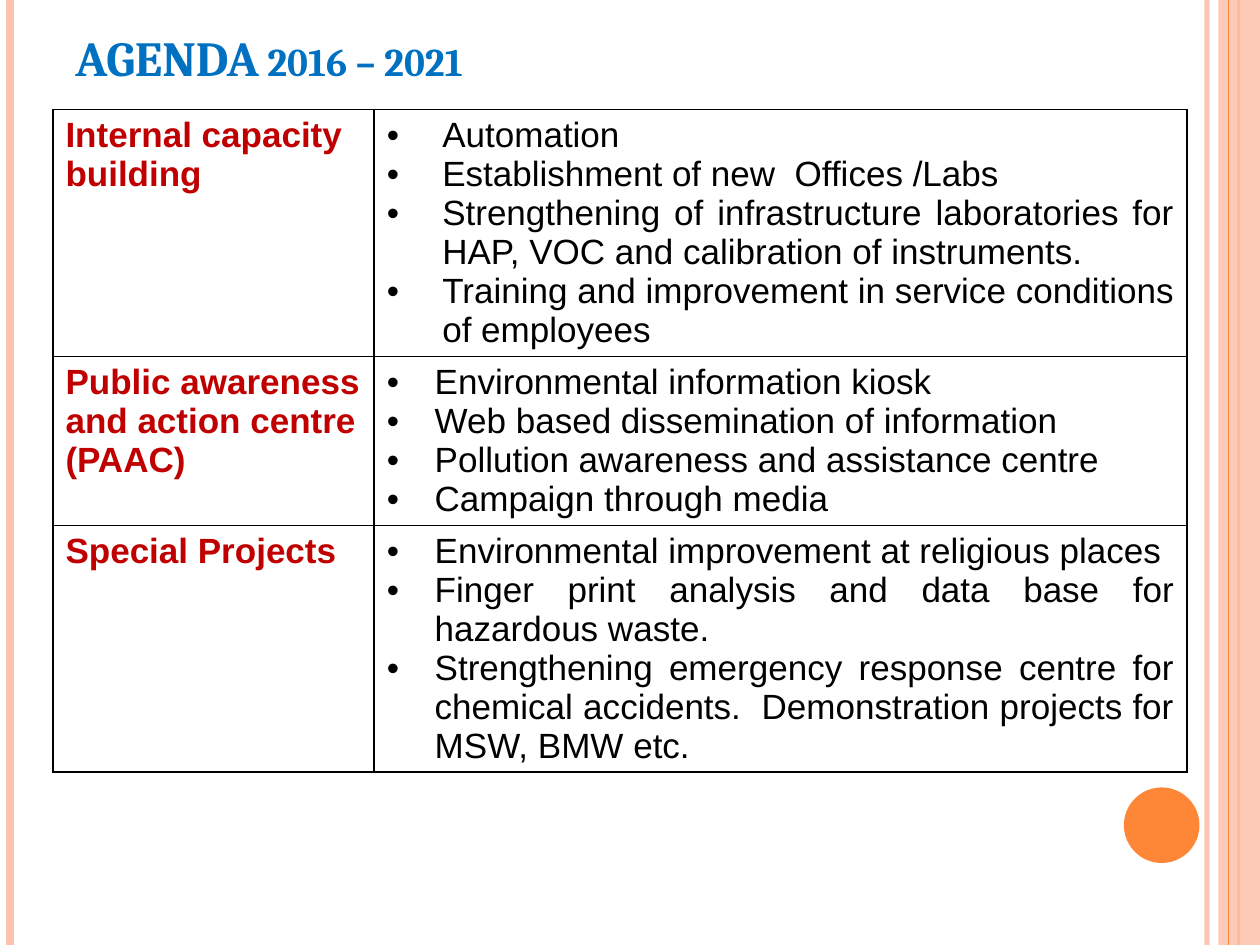
from dataclasses import dataclass

from lxml.etree import SubElement
from pptx import Presentation
from pptx.dml.color import RGBColor
from pptx.enum.shapes import MSO_CONNECTOR, MSO_SHAPE
from pptx.enum.text import MSO_ANCHOR, PP_ALIGN
from pptx.oxml.ns import qn
from pptx.util import Inches, Pt


@dataclass(frozen=True)
class Theme:
    peach: str = "FEC3AE"
    orange: str = "FE8637"
    heading: str = "0070C0"
    topic: str = "C00000"
    ink: str = "000000"
    heading_font: str = "Cambria"
    body_font: str = "Arial"
    heading_size: int = 28
    body_size: int = 20
    border: int = 1


theme = Theme()


def write(paragraph, text, *, font=theme.body_font, size=theme.body_size, color=theme.ink,
          bold=False, small_caps=False, align=None, indent=0, bullet=None):
    run = paragraph.add_run()
    run.text = text
    run.font.name = font
    run.font.size = Pt(size)
    run.font.bold = bold
    run.font.color.rgb = RGBColor.from_string(color)
    if small_caps:
        run.font._element.set("cap", "small")
    if align is not None:
        paragraph.alignment = align
    properties = paragraph._p.get_or_add_pPr()
    if indent:
        properties.set("marL", str(Inches(indent)))
        properties.set("indent", str(-Inches(indent)))
    if bullet:
        SubElement(properties, qn("a:buFont"), typeface=font)
        SubElement(properties, qn("a:buChar"), char=bullet)


def set_opacity(properties, percent):
    for color in properties.iter(qn("a:srgbClr")):
        SubElement(color, qn("a:alpha"), val=str(percent * 1000))


prs = Presentation()
prs.slide_width, prs.slide_height = Inches(10), Inches(7.5)
width, height = prs.slide_width, prs.slide_height
column, row = width // 100, height // 100
slide = prs.slides.add_slide(prs.slide_layouts[6])

stripes = [
    (95.8, theme.peach, 3, 93),
    (0.8, theme.peach, 4.5, 100),
    (98.3, theme.orange, 1.5, 100),
    (97.5, theme.orange, 0.75, 100),
]
panel = (MSO_SHAPE.RECTANGLE, 96.7, 0, 3.3, 100, theme.peach, 87)
disc = (MSO_SHAPE.OVAL, 89.2, 83.33, 6, 8, theme.orange, 100)


for position, (share, color, weight, opacity) in enumerate(stripes):
    if position == 3:
        kind, left, top, wide, high, fill, fill_opacity = panel
        side_panel = slide.shapes.add_shape(
            kind, int(left * column), int(top * row), int(wide * column), int(high * row))
        side_panel.shadow.inherit = False
        side_panel.fill.solid()
        side_panel.fill.fore_color.rgb = RGBColor.from_string(fill)
        side_panel.line.fill.background()
        set_opacity(side_panel._element.spPr, fill_opacity)
    x = int(share * column)
    stripe = slide.shapes.add_connector(MSO_CONNECTOR.STRAIGHT, x, 0, x, height)
    stripe.line.color.rgb = RGBColor.from_string(color)
    stripe.line.width = Pt(weight)
    SubElement(stripe._element.spPr, qn("a:effectLst"))
    if opacity < 100:
        set_opacity(stripe._element.spPr, opacity)

kind, left, top, wide, high, fill, _ = disc
page_disc = slide.shapes.add_shape(
    kind, int(left * column), int(top * row), int(wide * column), int(high * row))
page_disc.shadow.inherit = False
page_disc.fill.solid()
page_disc.fill.fore_color.rgb = RGBColor.from_string(fill)
page_disc.line.fill.background()

agenda = [
    ("Internal capacity building", 0.44, PP_ALIGN.JUSTIFY, [
        "Automation",
        "Establishment of new  Offices /Labs",
        "Strengthening of infrastructure laboratories for HAP, VOC and calibration of instruments.",
        "Training and improvement in service conditions of employees",
    ]),
    ("Public awareness and action centre (PAAC)", 0.38, None, [
        "Environmental information kiosk",
        "Web based dissemination of information",
        "Pollution awareness and assistance centre",
        "Campaign through media",
    ]),
    ("Special Projects", 0.38, PP_ALIGN.JUSTIFY, [
        "Environmental improvement at religious places",
        "Finger print analysis and data base for hazardous waste.",
        "Strengthening emergency response centre for chemical accidents.  "
        "Demonstration projects for MSW, BMW etc.",
    ]),
]
column_shares = (25.5, 64.5)
row_shares = (14.4, 14.4, 16.27)

plan = slide.shapes.add_table(
    len(agenda), len(column_shares), int(4.2 * column), int(11.6 * row),
    int(sum(column_shares) * column), int(sum(row_shares) * row)).table
plan.first_row = plan.horz_banding = False
for plan_column, share in zip(plan.columns, column_shares):
    plan_column.width = int(share * column)
for plan_row, share in zip(plan.rows, row_shares):
    plan_row.height = int(share * row)

for plan_row, (topic, indent, align, actions) in zip(plan.rows, agenda):
    topic_cell, action_cell = plan_row.cells
    write(topic_cell.text_frame.paragraphs[0], topic, color=theme.topic, bold=True)
    action_text = action_cell.text_frame
    for number, action in enumerate(actions):
        paragraph = action_text.add_paragraph() if number else action_text.paragraphs[0]
        write(paragraph, action, align=align, indent=indent, bullet="•")
    for cell in plan_row.cells:
        properties = cell._tc.get_or_add_tcPr()
        for edge in ("a:lnL", "a:lnR", "a:lnT", "a:lnB"):
            border = SubElement(properties, qn(edge), w=str(Pt(theme.border)))
            SubElement(SubElement(border, qn("a:solidFill")), qn("a:srgbClr"), val=theme.ink)
        cell.fill.background()

heading = slide.shapes.add_textbox(
    int(5 * column), int(2.27 * row), int(90 * column), int(7.6 * row)).text_frame
heading.word_wrap = True
heading.vertical_anchor = MSO_ANCHOR.MIDDLE
write(heading.paragraphs[0], "AGENDA 2016 – 2021", font=theme.heading_font,
      size=theme.heading_size, color=theme.heading, bold=True, small_caps=True, indent=0.43)

prs.save("out.pptx")
